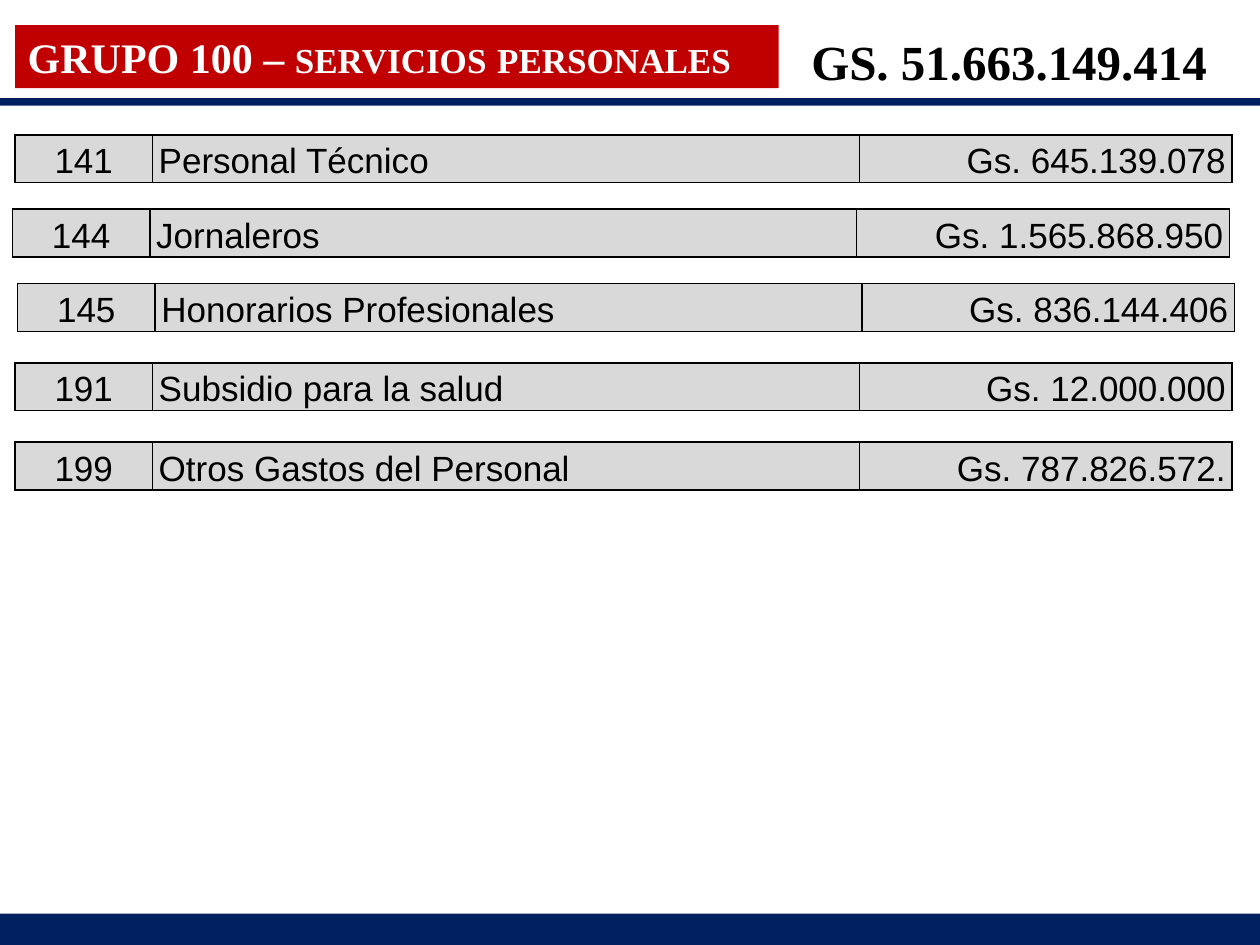
from dataclasses import dataclass

from lxml import etree
from pptx import Presentation
from pptx.dml.color import RGBColor
from pptx.enum.shapes import MSO_SHAPE
from pptx.enum.text import MSO_ANCHOR, MSO_AUTO_SIZE, PP_ALIGN
from pptx.oxml.ns import qn
from pptx.util import Inches, Pt

RECTANGLE = MSO_SHAPE.RECTANGLE
TOP, MIDDLE = MSO_ANCHOR.TOP, MSO_ANCHOR.MIDDLE
LEFT, CENTER, RIGHT = PP_ALIGN.LEFT, PP_ALIGN.CENTER, PP_ALIGN.RIGHT
NO_AUTOFIT = MSO_AUTO_SIZE.NONE
TITLE_ONLY_LAYOUT = 5


@dataclass(frozen=True)
class Theme:
    """Colours, fonts and type sizes of the slide."""

    red: str = "C00000"
    navy: str = "002060"
    grey: str = "D9D9D9"
    white: str = "FFFFFF"
    black: str = "000000"
    heading_font: str = "Times New Roman"
    table_font: str = "Arial"
    total_size: int = 28
    title_size: int = 24
    small_title_size: int = 20
    table_size: int = 20
    border_width: int = 1


THEME = Theme()
TITLE_RUNS = [
    ("GRUPO 100 – ", THEME.title_size),
    ("SERVICIOS", THEME.small_title_size),
    (" ", THEME.title_size),
    ("PERSONALES", THEME.small_title_size),
]
TOTAL_RUNS = [("GS. 51.663.149.414", THEME.total_size)]
COLUMN_WIDTHS = (1.09, 5.61, 2.96)
COLUMN_ALIGNMENTS = (CENTER, LEFT, RIGHT)
ROW_HEIGHT = 0.38
BUDGET_ITEMS = [
    (0.12, 1.07, ("141", "Personal Técnico", "Gs. 645.139.078")),
    (0.10, 1.66, ("144", "Jornaleros", "Gs. 1.565.868.950")),
    (0.14, 2.25, ("145", "Honorarios Profesionales", "Gs. 836.144.406")),
    (0.12, 2.88, ("191", "Subsidio para la salud", "Gs. 12.000.000")),
    (0.12, 3.51, ("199", "Otros Gastos del Personal", "Gs. 787.826.572.")),
]


def apply_format(target, values):
    """Set each named attribute of the target."""
    for name, value in values.items():
        setattr(target, name, value)


def fill_solid(target, color):
    """Give a shape or cell a solid fill."""
    target.fill.solid()
    target.fill.fore_color.rgb = RGBColor.from_string(color)


def add_run(paragraph, text, size, font, color, bold=False):
    """Append a formatted run to a paragraph."""
    run = paragraph.add_run()
    run.text = text
    apply_format(run.font, {"size": Pt(size), "name": font, "bold": bold})
    run.font.color.rgb = RGBColor.from_string(color)


def add_bar(slide, left, top, width, height, color):
    """Add a plain filled rectangle."""
    shape = slide.shapes.add_shape(
        RECTANGLE, Inches(left), Inches(top), Inches(width), Inches(height)
    )
    shape.shadow.inherit = False
    shape.line.fill.background()
    fill_solid(shape, color)
    return shape


def write_heading(shape, runs, color):
    """Write bold heading runs at the top left of a shape."""
    frame = shape.text_frame
    apply_format(
        frame,
        {"word_wrap": True, "auto_size": NO_AUTOFIT, "vertical_anchor": TOP},
    )
    paragraph = frame.paragraphs[0]
    paragraph.alignment = LEFT
    for text, size in runs:
        add_run(paragraph, text, size, THEME.heading_font, color, bold=True)


def place_title(slide):
    """Move and format the title placeholder as the red heading."""
    title = slide.shapes.title
    apply_format(
        title,
        {
            "left": Inches(0.12),
            "top": Inches(0.2),
            "width": Inches(6.06),
            "height": Inches(0.5),
        },
    )
    fill_solid(title, THEME.red)
    write_heading(title, TITLE_RUNS, THEME.white)


def add_cell_borders(cell):
    """Draw a thin black line on every side of a cell."""
    properties = cell._tc.get_or_add_tcPr()
    for side in ("a:lnL", "a:lnR", "a:lnT", "a:lnB"):
        line = etree.SubElement(
            properties, qn(side), w=str(Pt(THEME.border_width))
        )
        solid = etree.SubElement(line, qn("a:solidFill"))
        etree.SubElement(solid, qn("a:srgbClr"), val=THEME.black)


def format_cell(cell, text, alignment):
    """Write and style one table cell."""
    add_cell_borders(cell)
    fill_solid(cell, THEME.grey)
    apply_format(
        cell,
        {
            "vertical_anchor": MIDDLE,
            "margin_left": Inches(0.05),
            "margin_right": Inches(0.05),
            "margin_top": 0,
            "margin_bottom": 0,
        },
    )
    paragraph = cell.text_frame.paragraphs[0]
    apply_format(paragraph, {"alignment": alignment, "line_spacing": 1.15})
    add_run(paragraph, text, THEME.table_size, THEME.table_font, THEME.black)


def add_budget_table(slide, left, top, values):
    """Add a one-row table with code, concept and amount."""
    table = slide.shapes.add_table(
        1,
        len(values),
        Inches(left),
        Inches(top),
        Inches(sum(COLUMN_WIDTHS)),
        Inches(ROW_HEIGHT),
    ).table
    apply_format(table, {"first_row": False, "horz_banding": False})
    for column, width in zip(table.columns, COLUMN_WIDTHS):
        column.width = Inches(width)
    for cell, text, alignment in zip(
        table.rows[0].cells, values, COLUMN_ALIGNMENTS
    ):
        format_cell(cell, text, alignment)


def main():
    """Build and save the slide."""
    presentation = Presentation()
    apply_format(
        presentation,
        {"slide_width": Inches(10), "slide_height": Inches(7.5)},
    )
    slide = presentation.slides.add_slide(
        presentation.slide_layouts[TITLE_ONLY_LAYOUT]
    )
    place_title(slide)
    total = add_bar(slide, 6.34, 0.2, 3.39, 0.57, THEME.white)
    write_heading(total, TOTAL_RUNS, THEME.black)
    add_bar(slide, 0, 7.25, 10, 0.25, THEME.navy)
    add_bar(slide, 0, 0.78, 10, 0.06, THEME.navy)
    for left, top, values in BUDGET_ITEMS:
        add_budget_table(slide, left, top, values)
    presentation.save("out.pptx")


if __name__ == "__main__":
    main()
